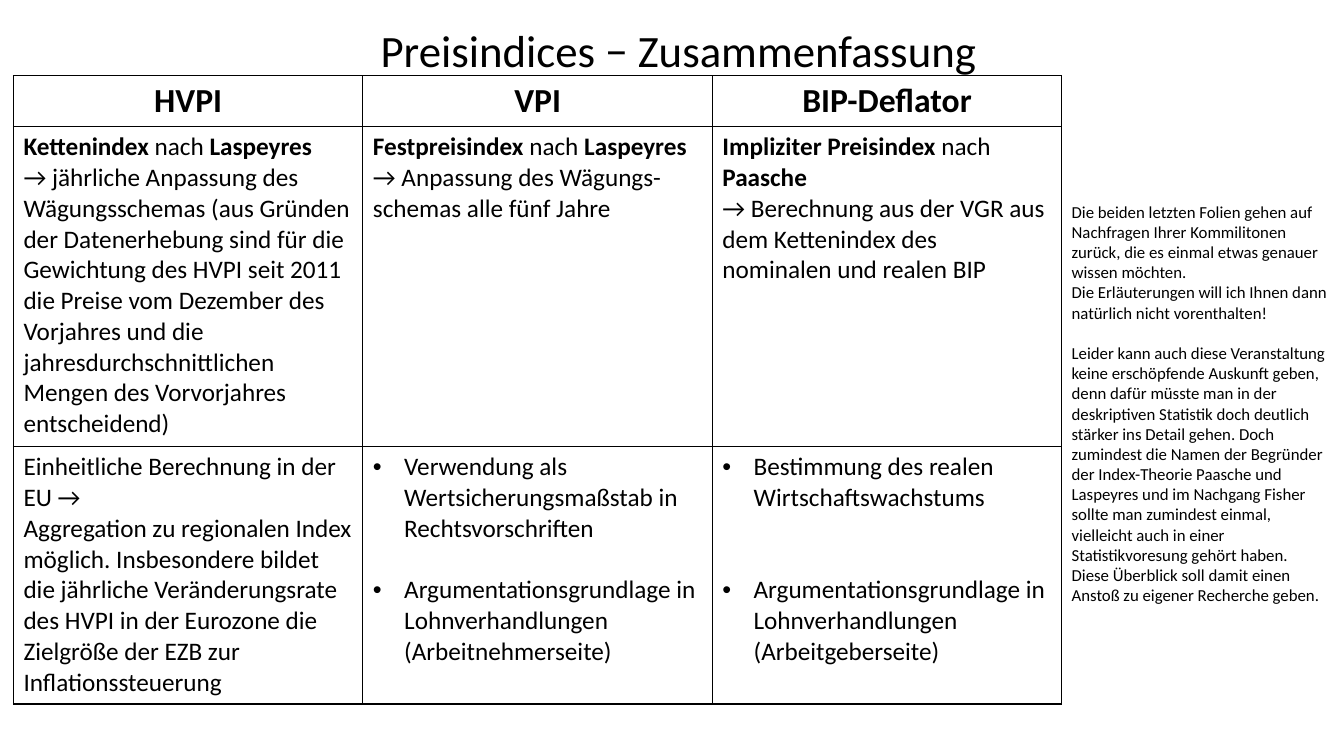
from lxml import etree
from pptx import Presentation
from pptx.dml.color import RGBColor
from pptx.enum.text import MSO_ANCHOR, MSO_AUTO_SIZE, PP_ALIGN
from pptx.oxml.ns import qn
from pptx.util import Emu, Inches, Pt

CENTER, LEFT = PP_ALIGN.CENTER, PP_ALIGN.LEFT
MIDDLE, TOP = MSO_ANCHOR.MIDDLE, MSO_ANCHOR.TOP
NO_FIT, GROW = MSO_AUTO_SIZE.NONE, MSO_AUTO_SIZE.SHAPE_TO_FIT_TEXT
TITLE_ONLY = 5
LINE = 1.22  # line height of the font, as a multiple of its size

HEADERS = ["HVPI", "VPI", "BIP-Deflator"]
# Cells are lists of (text, blank lines before); ** encloses bold words.
METHODS = [
    [("**Kettenindex** nach **Laspeyres**", 0),
     ("→ jährliche Anpassung des Wägungsschemas (aus Gründen der Datenerhebung "
      "sind für die Gewichtung des HVPI seit 2011 die Preise vom Dezember des "
      "Vorjahres und die jahresdurchschnittlichen Mengen des Vorvorjahres "
      "entscheidend)", 0)],
    [("**Festpreisindex** nach **Laspeyres**", 0),
     ("→ Anpassung des Wägungs- schemas alle fünf Jahre", 0)],
    [("**Impliziter Preisindex** nach **Paasche**", 0),
     ("→ Berechnung aus der VGR aus dem Kettenindex des nominalen und realen BIP", 0)],
]
USES = [
    [("Einheitliche Berechnung in der EU →", 0),
     ("Aggregation zu regionalen Index möglich. Insbesondere bildet die jährliche "
      "Veränderungsrate des HVPI in der Eurozone die Zielgröße der EZB zur "
      "Inflationssteuerung", 0)],
    [("Verwendung als Wertsicherungsmaßstab in Rechtsvorschriften", 0),
     ("Argumentationsgrundlage in Lohnverhandlungen (Arbeitnehmerseite)", 1)],
    [("Bestimmung des realen Wirtschaftswachstums", 0),
     ("Argumentationsgrundlage in Lohnverhandlungen (Arbeitgeberseite)", 2)],
]
REMARKS = [
    ("Die beiden letzten Folien gehen auf Nachfragen Ihrer Kommilitonen zurück, "
     "die es einmal etwas genauer wissen möchten.", 0),
    ("Die Erläuterungen will ich Ihnen dann natürlich nicht vorenthalten!", 0),
    ("Leider kann auch diese Veranstaltung keine erschöpfende Auskunft geben, denn "
     "dafür müsste man in der deskriptiven Statistik doch deutlich stärker ins "
     "Detail gehen. Doch zumindest die Namen der Begründer der Index-Theorie "
     "Paasche und Laspeyres und im Nachgang Fisher sollte man zumindest einmal, "
     "vielleicht auch in einer Statistikvoresung gehört haben.", 1),
    ("Diese Überblick soll damit einen Anstoß zu eigener Recherche geben.", 0),
]


def rgb(value):
    return RGBColor.from_string(value)


class Deck:
    font, ink, paper = "Calibri", "000000", "FFFFFF"

    def __init__(self, prs):
        self.prs = prs
        self.s = prs.slides.add_slide(prs.slide_layouts[TITLE_ONLY])

    def box(self, x, y, w, h):
        """Turn shares of the slide's size into lengths."""
        W, H = self.prs.slide_width, self.prs.slide_height
        return Emu(int(x * W)), Emu(int(y * H)), Emu(int(w * W)), Emu(int(h * H))

    def bullet(self, p):
        pPr = p._p.get_or_add_pPr()
        pPr.set("marL", str(Inches(0.31)))
        pPr.set("indent", str(-Inches(0.31)))
        etree.SubElement(pPr, qn("a:buFont")).set("typeface", "Arial")
        etree.SubElement(pPr, qn("a:buChar")).set("char", "•")

    def fill_text(self, tf, paragraphs, size, align=LEFT, bullets=False):
        for i, (text, blanks) in enumerate(paragraphs):
            p = tf.paragraphs[0] if i == 0 else tf.add_paragraph()
            p.alignment = align
            if blanks:
                p.space_before = Pt(round(blanks * size * LINE, 1))
            if bullets:
                self.bullet(p)
            for j, part in enumerate(text.split("**")):
                if part:
                    r = p.add_run()
                    r.text = part
                    r.font.name, r.font.size = self.font, Pt(size)
                    r.font.bold = j % 2 == 1
                    r.font.color.rgb = rgb(self.ink)

    def title(self, text, *place):
        sp = self.s.shapes.title
        sp.left, sp.top, sp.width, sp.height = self.box(*place)
        tf = sp.text_frame
        tf.auto_size, tf.vertical_anchor = NO_FIT, MIDDLE
        self.fill_text(tf, [(text, 0)], 32, CENTER)

    def note(self, paragraphs, *place):
        tf = self.s.shapes.add_textbox(*self.box(*place)).text_frame
        tf.word_wrap, tf.auto_size = True, GROW
        self.fill_text(tf, paragraphs, 12)

    def border(self, cell):
        tcPr = cell._tc.get_or_add_tcPr()
        for i, side in enumerate(("a:lnL", "a:lnR", "a:lnT", "a:lnB")):
            ln = etree.Element(qn(side), w=str(Pt(1)))
            fill = etree.SubElement(ln, qn("a:solidFill"))
            etree.SubElement(fill, qn("a:srgbClr")).set("val", self.ink)
            tcPr.insert(i, ln)

    def table(self, rows, shares, *place):
        """Draw equal columns, with row heights as shares of the table's height."""
        x, y, w, h = self.box(*place)
        tbl = self.s.shapes.add_table(len(rows), len(rows[0]), x, y, w, h).table
        tbl.first_row = tbl.horz_banding = False
        for i, (row, share) in enumerate(zip(rows, shares)):
            tbl.rows[i].height = Emu(int(h * share))
            for j, paragraphs in enumerate(row):
                cell = tbl.cell(i, j)
                cell.vertical_anchor = TOP
                cell.fill.solid()
                cell.fill.fore_color.rgb = rgb(self.paper)
                self.border(cell)
                self.fill_text(cell.text_frame, paragraphs, 24 if i == 0 else 18,
                               CENTER if i == 0 else LEFT, bullets=i == 2 and j > 0)


def main():
    prs = Presentation()
    prs.slide_width, prs.slide_height = Inches(13.33), Inches(7.5)
    deck = Deck(prs)
    deck.title("Preisindices − Zusammenfassung", 0.14, 0.02, 0.73, 0.09)
    header = [[(f"**{name}**", 0)] for name in HEADERS]
    deck.table([header, METHODS, USES], (0.08, 0.51, 0.41),
               0.01, 0.1, 0.78, 0.83)
    deck.note(REMARKS, 0.79, 0.26, 0.21, 0.55)
    prs.save("out.pptx")


if __name__ == "__main__":
    main()
